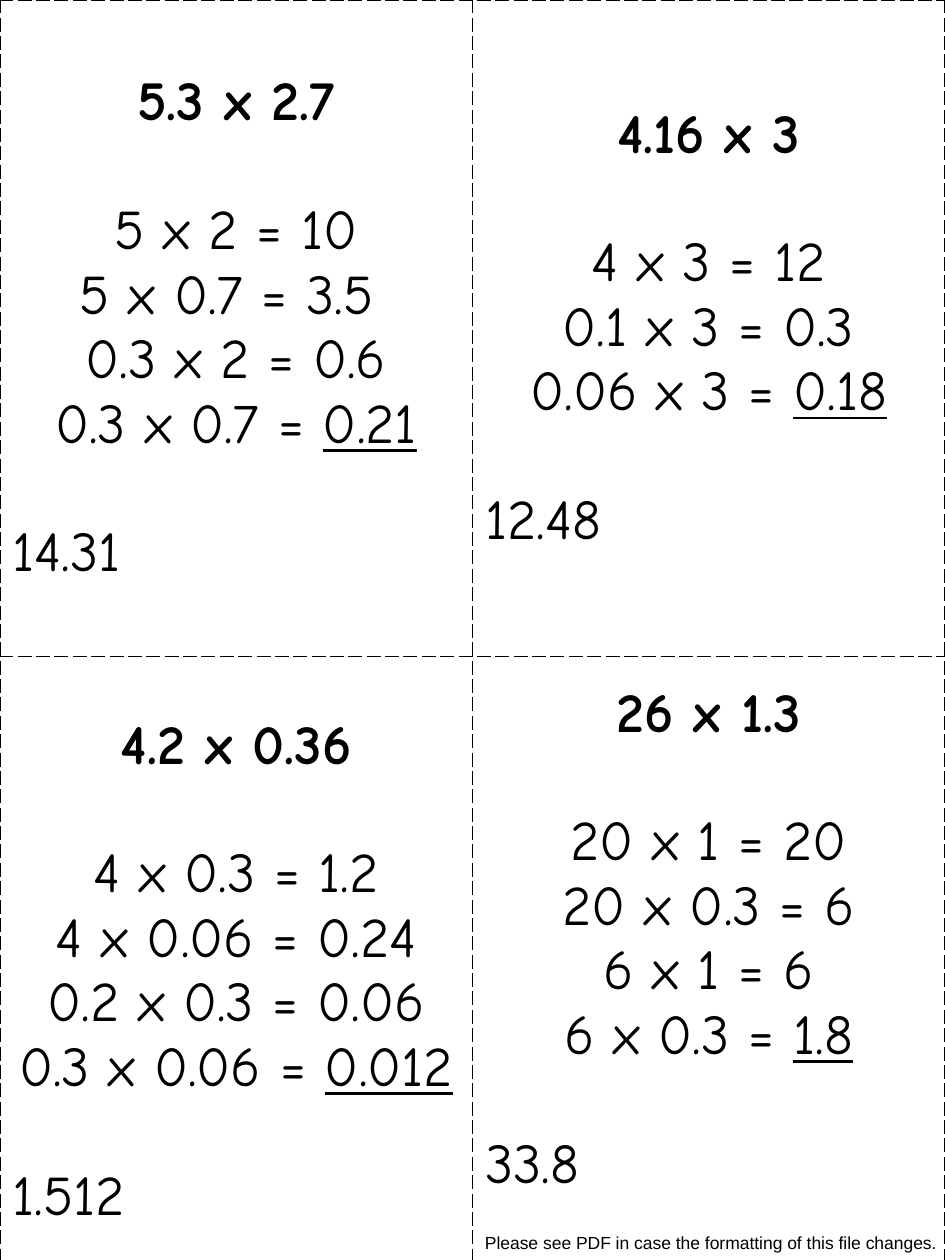
from pptx import Presentation
from pptx.dml.color import RGBColor
from pptx.enum.text import MSO_ANCHOR, MSO_AUTO_SIZE, PP_ALIGN
from pptx.oxml import parse_xml
from pptx.oxml.ns import nsdecls
from pptx.util import Inches, Pt

LINE = 0.51  # height of one line of card text, in inches


def add_run(para, text, font, size, bold=False, under=False):
    run = para.add_run()
    run.text = text
    run.font.name = font
    run.font.size = Pt(size)
    run.font.bold = bold
    run.font.underline = under
    run.font.color.rgb = RGBColor.from_string("000000")


def dash_edges(cell):
    props = cell._tc.get_or_add_tcPr()
    for spot, side in enumerate("LRTB"):
        props.insert(spot, parse_xml(
            f'<a:ln{side} {nsdecls("a")} w="12700"><a:solidFill>'
            '<a:srgbClr val="000000"/></a:solidFill>'
            f'<a:prstDash val="lgDash"/></a:ln{side}>'))


# Title, steps, answer, then spare lines above and below
cards = [
    [("5.3 x 2.7", ["5 x 2 = 10", "5 x 0.7 = 3.5 ", "0.3 x 2 = 0.6",
                    "0.3 x 0.7 = 0.21"], "14.31", 1, 1),
     ("4.16 x 3", ["4 x 3 = 12", "0.1 x 3 = 0.3", "0.06 x 3 = 0.18"],
      "12.48", 0, 0)],
    [("4.2 x 0.36", ["4 x 0.3 = 1.2", "4 x 0.06 = 0.24", "0.2 x 0.3 = 0.06",
                     "0.3 x 0.06 = 0.012"], "1.512", 0, 0),
     ("26 x 1.3", ["20 x 1 = 20", "20 x 0.3 = 6", "6 x 1 = 6",
                   "6 x 0.3 = 1.8"], "33.8", 0, 1)],
]

deck = Presentation()
deck.slide_width, deck.slide_height = Inches(7.5), Inches(10)
slide = deck.slides.add_slide(deck.slide_layouts[6])

table = slide.shapes.add_table(2, 2, 0, 0, Inches(7.5), Inches(10)).table
table.first_row = table.horz_banding = False

for r, row in enumerate(cards):
    for c, (title, steps, answer, above, below) in enumerate(row):
        cell = table.cell(r, c)
        dash_edges(cell)
        cell.fill.background()
        cell.vertical_anchor = MSO_ANCHOR.MIDDLE
        cell.margin_left = cell.margin_right = Inches(0.1)
        cell.margin_top = Inches(0.05 + LINE * above)
        cell.margin_bottom = Inches(0.05 + LINE * below)

        frame = cell.text_frame
        para = frame.paragraphs[0]
        para.alignment = PP_ALIGN.CENTER
        add_run(para, title, "Comic Neue", 32, bold=True)
        for n, step in enumerate(steps):
            para = frame.add_paragraph()
            para.alignment = PP_ALIGN.CENTER
            if n == 0:
                para.space_before = Inches(LINE)
            if n < len(steps) - 1:
                add_run(para, step, "Comic Neue", 32)
            else:
                left, right = step.split("= ")
                add_run(para, left + "= ", "Comic Neue", 32)
                add_run(para, right, "Comic Neue", 32, under=True)
        para = frame.add_paragraph()
        para.alignment = PP_ALIGN.LEFT
        para.space_before = Inches(LINE)
        add_run(para, answer, "Comic Neue", 32)

note = slide.shapes.add_textbox(Inches(3.75), Inches(9.73), Inches(3.85), Inches(0.27))
note.text_frame.word_wrap = False
note.text_frame.auto_size = MSO_AUTO_SIZE.SHAPE_TO_FIT_TEXT
add_run(note.text_frame.paragraphs[0],
        "Please see PDF in case the formatting of this file changes.", "Arial", 10)

deck.save("out.pptx")
